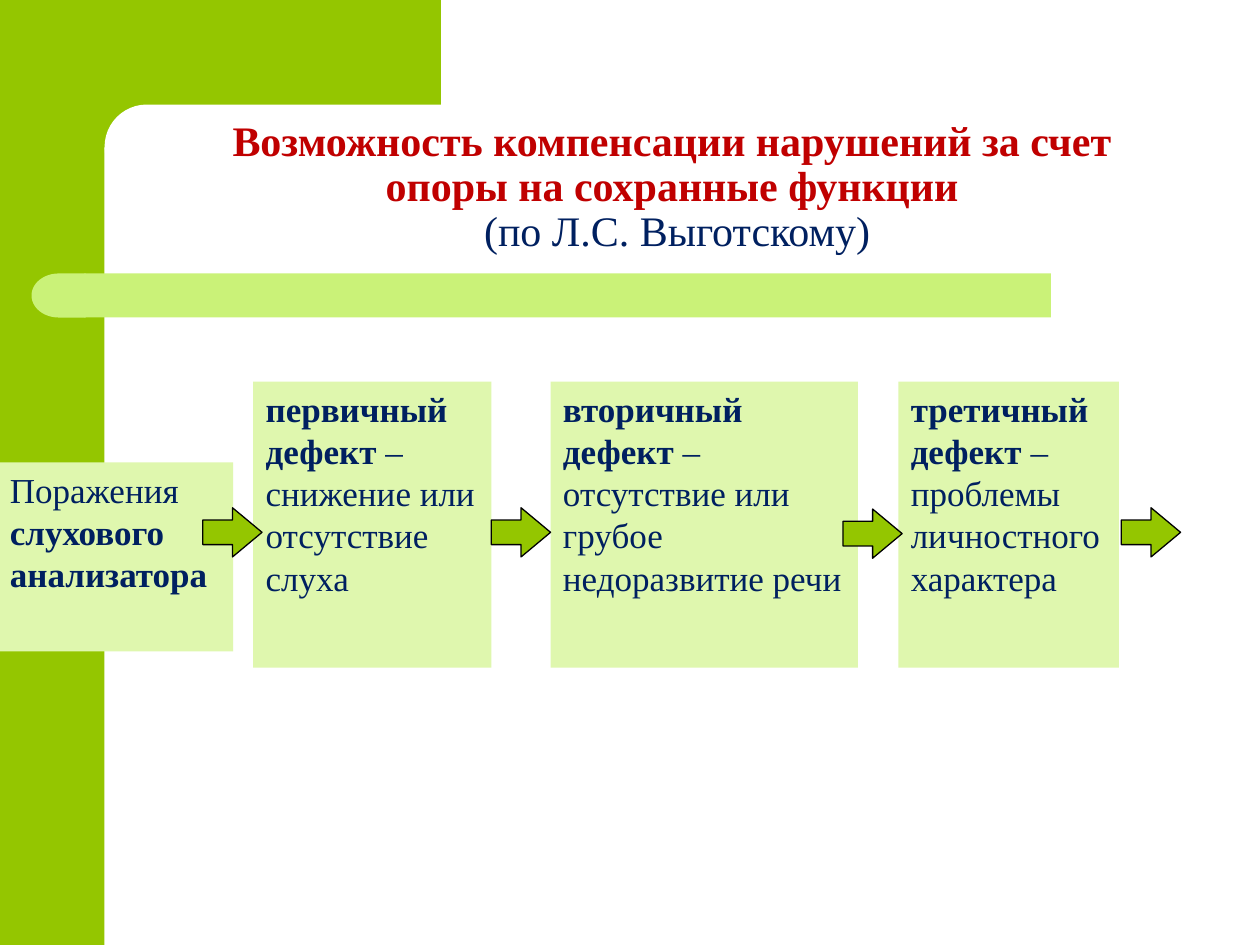
"""Build a slide on how a hearing disorder leads to further defects."""
import pptx
import pptx.dml.color
import pptx.enum.shapes
import pptx.enum.text
import pptx.util

Inches = pptx.util.Inches
Pt = pptx.util.Pt
RGBColor = pptx.dml.color.RGBColor
Kind = pptx.enum.shapes.MSO_SHAPE
Align = pptx.enum.text.PP_ALIGN
Anchor = pptx.enum.text.MSO_ANCHOR

GREEN = RGBColor(0x94, 0xC6, 0x00)
LIME = RGBColor(0xCA, 0xF2, 0x78)
PALE = RGBColor(0xDF, 0xF7, 0xAE)
WHITE = RGBColor(0xFF, 0xFF, 0xFF)
BLACK = RGBColor(0x00, 0x00, 0x00)
NAVY = RGBColor(0x00, 0x20, 0x60)
RED = RGBColor(0xC0, 0x00, 0x00)
FONT = "Times New Roman"


def add_shape(slide, kind, area, fill):
    shape = slide.shapes.add_shape(kind, *map(Inches, area))
    shape.shadow.inherit = False
    shape.fill.solid()
    shape.fill.fore_color.rgb = fill
    shape.line.fill.background()
    return shape


def add_run(para, text, size, color, bold):
    run = para.add_run()
    run.text = text
    font = run.font
    font.name, font.size, font.bold = FONT, Pt(size), bold
    font.color.rgb = color


def add_frame(slide):
    add_shape(slide, Kind.RECTANGLE, (0, 0, 0.83, 7.5), GREEN)
    add_shape(slide, Kind.RECTANGLE, (0.75, 0, 2.75, 1.17), GREEN)
    curve = add_shape(slide, Kind.ROUNDED_RECTANGLE, (0.83, 0.83, 5.58, 0.67), WHITE)
    curve.adjustments[0] = 0.5
    add_shape(slide, Kind.RECTANGLE, (0.67, 2.17, 7.67, 0.35), LIME)
    cap = add_shape(slide, Kind.FLOWCHART_DELAY, (0.25, 2.17, 0.43, 0.35), LIME)
    cap.rotation = 180


def add_title(slide):
    box = slide.shapes.add_textbox(*map(Inches, (1, 0.83, 8.75, 1.25)))
    frame = box.text_frame
    frame.word_wrap = True
    frame.vertical_anchor = Anchor.BOTTOM
    para = frame.paragraphs[0]
    para.alignment = Align.CENTER
    para.line_spacing = 0.9
    for line in ("Возможность компенсации нарушений за счет ",
                 "опоры на сохранные функции "):
        add_run(para, line, 24, RED, True)
        para.add_line_break()
    add_run(para, "(по Л.С. Выготскому)", 24, NAVY, False)


def add_card(slide, area, runs):
    card = add_shape(slide, Kind.RECTANGLE, area, PALE)
    frame = card.text_frame
    frame.word_wrap = True
    frame.vertical_anchor = Anchor.TOP
    para = frame.paragraphs[0]
    para.alignment = Align.LEFT
    for text, bold in runs:
        add_run(para, text, 20, NAVY, bold)
    return para


def add_arrow(slide, left, top):
    arrow = add_shape(slide, Kind.RIGHT_ARROW, (left, top, 0.47, 0.39), GREEN)
    arrow.adjustments[1] = 0.6
    arrow.line.color.rgb = BLACK
    arrow.line.width = Pt(0.75)


def main():
    deck = pptx.Presentation()
    deck.slide_width, deck.slide_height = Inches(10), Inches(7.5)
    slide = deck.slides.add_slide(deck.slide_layouts[6])
    add_frame(slide)
    add_title(slide)
    cause = add_card(slide, (-0.02, 3.67, 1.87, 1.5),
                     [("Поражения ", False), ("слухового анализатора", True)])
    cause.space_before = Pt(4)
    for left, width, name, text in (
        (2.01, 1.89, "первичный дефект", " – снижение или отсутствие слуха"),
        (4.37, 2.44, "вторичный дефект", " – отсутствие или грубое недоразвитие речи"),
        (7.13, 1.75, "третичный дефект", " – проблемы личностного характера"),
    ):
        add_card(slide, (left, 3.03, width, 2.27), [(name, True), (text, False)])
    for left, top in ((1.61, 4.03), (3.9, 4.03), (6.69, 4.04), (8.9, 4.03)):
        add_arrow(slide, left, top)
    deck.save("out.pptx")


if __name__ == "__main__":
    main()
